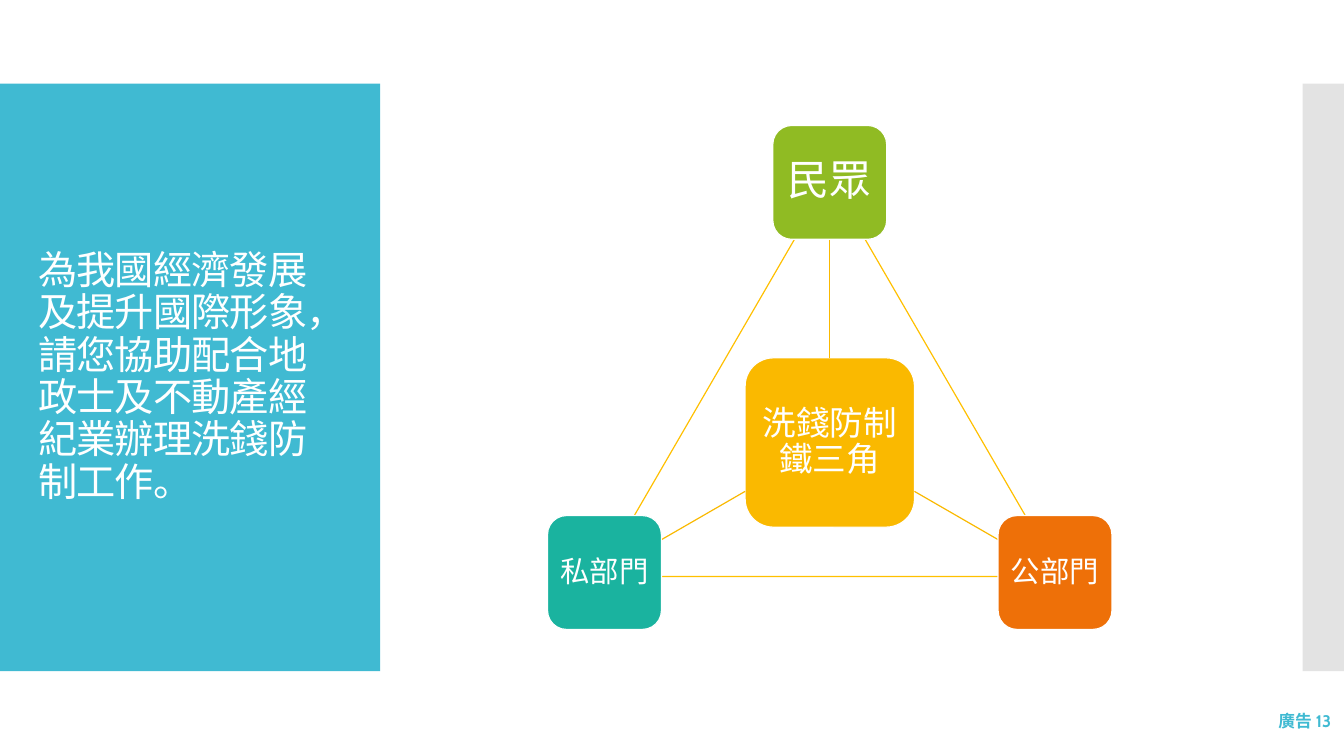
from math import cos, radians, sin

from lxml.etree import SubElement
from pptx import Presentation
from pptx.dml.color import RGBColor as RGB
from pptx.enum.shapes import MSO_CONNECTOR as LINE, MSO_SHAPE as SHAPE
from pptx.enum.text import MSO_ANCHOR as ANCHOR, PP_ALIGN as ALIGN
from pptx.oxml.ns import qn
from pptx.util import Inches, Pt

# Content
TITLE = "為我國經濟發展及提升國際形象，請您協助配合地政士及不動產經紀業辦理洗錢防制工作。"
FOOTER = "廣告 13"
HUB = ("洗錢防制鐵三角", "FAB900", 24, 0.07)
# label, fill, type size, inset, direction from the hub in degrees
PARTIES = [
    ("民眾", "90BB23", 30, 0.08, -90),
    ("公部門", "EE7008", 21, 0.06, 30),
    ("私部門", "1AB39F", 21, 0.06, 150),
]


class Theme:
    font = "Cabin"
    accent, side, white = "40BAD2", "E3E3E3", "FFFFFF"
    triangle, spoke = "FFC000", "FAB900"
    title_size, footer_size, line_width = 28, 12, 0.85


# Geometry in inches
HUB_X, HUB_Y, HUB_SIZE = 8.23, 4.39, 1.68
PARTY_SIZE, RADIUS = 1.13, 2.58
BAND_TOP, BAND_HEIGHT = 0.83, 5.83

prs = Presentation()
prs.slide_width, prs.slide_height = Inches(13.33), Inches(7.5)
slide = prs.slides.add_slide(prs.slide_layouts[5])
shapes = slide.shapes


def box(left, top, width, height):
    return [Inches(v) for v in (left, top, width, height)]


def write(frame, text, size, color, align, spacing=1.0, inset=None):
    frame.word_wrap = True
    frame.vertical_anchor = ANCHOR.MIDDLE
    if inset is not None:
        frame.margin_left = frame.margin_right = Inches(inset)
        frame.margin_top = frame.margin_bottom = Inches(inset)
    paragraph = frame.paragraphs[0]
    paragraph.alignment, paragraph.line_spacing = align, spacing
    run = paragraph.add_run()
    run.text = text
    run.font.name, run.font.size = Theme.font, Pt(size)
    run.font.color.rgb = RGB.from_string(color)
    return run


def outline(line, color):
    line.color.rgb = RGB.from_string(color)
    line.width = Pt(Theme.line_width)


def panel(left, width, color):
    rect = shapes.add_shape(SHAPE.RECTANGLE, *box(left, BAND_TOP, width, BAND_HEIGHT))
    rect.shadow.inherit = False
    rect.fill.solid()
    rect.fill.fore_color.rgb = RGB.from_string(color)
    rect.line.fill.background()


def node(x, y, side, label, color, size, inset):
    tile = shapes.add_shape(SHAPE.ROUNDED_RECTANGLE,
                            *box(x - side / 2, y - side / 2, side, side))
    tile.shadow.inherit = False
    tile.fill.solid()
    tile.fill.fore_color.rgb = RGB.from_string(color)
    outline(tile.line, Theme.white)
    write(tile.text_frame, label, size, Theme.white, ALIGN.CENTER, 0.9, inset)


def spoke(dx, dy):
    """Join the facing edges of the hub and a party along (dx, dy)."""
    reach = max(abs(dx), abs(dy))
    start = HUB_SIZE / 2 / reach
    end = RADIUS - PARTY_SIZE / 2 / reach
    ends = [Inches(v) for t in (start, end) for v in (HUB_X + dx * t, HUB_Y + dy * t)]
    link = shapes.add_connector(LINE.STRAIGHT, *ends)
    outline(link.line, Theme.spoke)
    SubElement(link._element.spPr, qn("a:effectLst"))


# Side panels
panel(0, 3.77, Theme.accent)
panel(12.92, 0.42, Theme.side)

# Triangle behind the nodes
triangle = shapes.add_shape(SHAPE.ISOSCELES_TRIANGLE, *box(5.94, 1.77, 4.58, 3.95))
triangle.shadow.inherit = False
triangle.fill.background()
outline(triangle.line, Theme.triangle)

# Hub, spokes and parties
node(HUB_X, HUB_Y, HUB_SIZE, *HUB)
for label, color, size, inset, angle in PARTIES:
    dx, dy = cos(radians(angle)), sin(radians(angle))
    spoke(dx, dy)
    node(HUB_X + RADIUS * dx, HUB_Y + RADIUS * dy, PARTY_SIZE, label, color, size, inset)

# Title, brought in front of its panel
title = shapes.title
title.left, title.top, title.width, title.height = box(0.28, 1.23, 3.22, 5.03)
heading = write(title.text_frame, TITLE, Theme.title_size, Theme.white, ALIGN.LEFT, 0.9)
heading.font._element.set("spc", "-60")
shapes._spTree.append(title._element)

# Footer
footer = shapes.add_textbox(*box(11.63, 6.95, 1.67, 0.4))
write(footer.text_frame, FOOTER, Theme.footer_size, Theme.accent, ALIGN.RIGHT).font.bold = True

prs.save("out.pptx")
